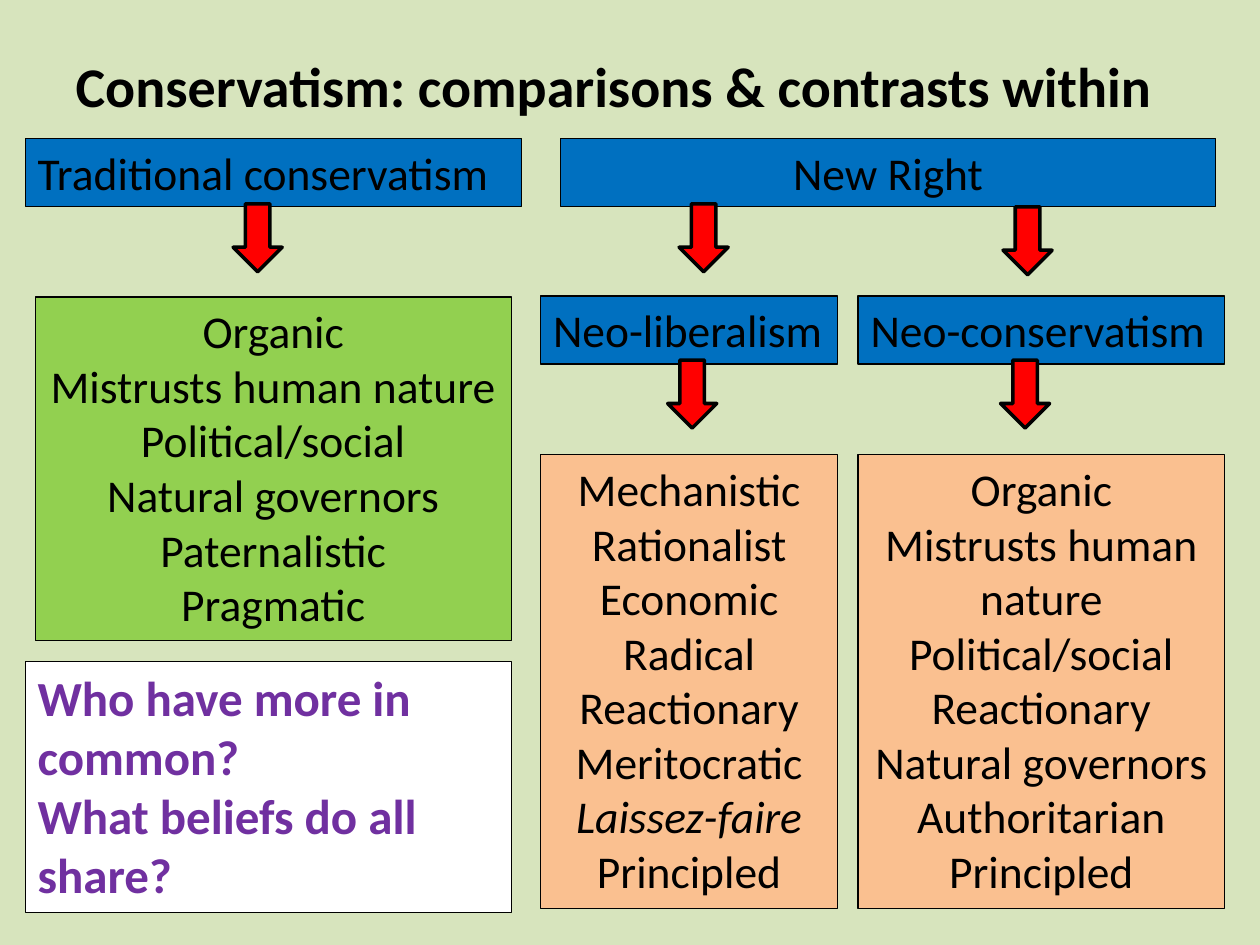
"""Build a slide comparing the strands of conservatism."""
from dataclasses import dataclass

from pptx import Presentation
from pptx.dml.color import RGBColor
from pptx.enum.shapes import MSO_SHAPE as Kind
from pptx.enum.text import MSO_ANCHOR as Anchor, MSO_AUTO_SIZE as Fit, PP_ALIGN as Align
from pptx.util import Cm, Pt

BLUE, GREEN, PEACH = "0070C0", "92D050", "FAC090"
BLACK, WHITE, RED, PURPLE = "000000", "FFFFFF", "FF0000", "7030A0"
HEAD = 1.37
ROW1, ROW2, ROW3 = 2.79, 5.97, 9.17
LIB, CON = (10.9, 5.99), (17.3, 7.39)


@dataclass
class Box:
    """A filled panel with its lines of text."""
    left: float
    top: float
    wide: float
    high: float
    fill: str
    lines: list[str]
    align: Align = Align.CENTER
    size: int = 26
    ink: str = BLACK
    bold: bool = False


@dataclass
class Arrow:
    """The top left corner of a down arrow."""
    left: float
    top: float


def tint(code: str) -> RGBColor:
    """Turn a hex string into a colour."""
    return RGBColor.from_string(code)


def write(para, text: str, size: int, ink: str, bold: bool) -> None:
    """Add one styled run to a paragraph."""
    run = para.add_run()
    run.text = text
    font = run.font
    font.name, font.size, font.bold = "Calibri", Pt(size), bold
    font.italic = text == "Laissez-faire"
    font.color.rgb = tint(ink)


def place(slide, kind: Kind, area: tuple, fill: str, line: float):
    """Add a flat shape with a black outline."""
    shape = slide.shapes.add_shape(kind, *map(Cm, area))
    shape.shadow.inherit = False
    shape.fill.solid()
    shape.fill.fore_color.rgb = tint(fill)
    shape.line.color.rgb = tint(BLACK)
    shape.line.width = Pt(line)
    return shape


def draw_box(slide, box: Box) -> None:
    """Draw a panel and its text."""
    area = (box.left, box.top, box.wide, box.high)
    frame = place(slide, Kind.RECTANGLE, area, box.fill, 0.75).text_frame
    frame.word_wrap = True
    frame.auto_size = Fit.SHAPE_TO_FIT_TEXT
    frame.vertical_anchor = Anchor.TOP
    for i, text in enumerate(box.lines):
        para = frame.add_paragraph() if i else frame.paragraphs[0]
        para.alignment = box.align
        write(para, text, box.size, box.ink, box.bold)


def draw_arrow(slide, arrow: Arrow) -> None:
    """Draw a red down arrow."""
    place(slide, Kind.DOWN_ARROW, (arrow.left, arrow.top, 0.99, HEAD), RED, 2)


def draw_title(slide, text: str) -> None:
    """Move and fill the title placeholder."""
    title = slide.shapes.title
    title.left, title.top, title.width, title.height = map(Cm, (1.27, 0.53, 22.86, 2.36))
    frame = title.text_frame
    frame.word_wrap = True
    frame.auto_size = Fit.NONE
    frame.vertical_anchor = Anchor.MIDDLE
    para = frame.paragraphs[0]
    para.alignment = Align.LEFT
    write(para, text, 32, BLACK, True)


BOXES = [
    Box(0.51, ROW1, 10.01, HEAD, BLUE, ["Traditional conservatism"], Align.LEFT),
    Box(0.71, 5.99, 9.6, 6.93, GREEN, [
        "Organic", "Mistrusts human nature", "Political/social",
        "Natural governors", "Paternalistic", "Pragmatic"]),
    Box(11.3, ROW1, 13.21, HEAD, BLUE, ["New Right"]),
    Box(LIB[0], ROW2, LIB[1], HEAD, BLUE, ["Neo-liberalism"], Align.LEFT),
    Box(CON[0], ROW2, CON[1], HEAD, BLUE, ["Neo-conservatism"], Align.LEFT),
    Box(LIB[0], ROW3, LIB[1], 9.14, PEACH, [
        "Mechanistic", "Rationalist", "Economic", "Radical", "Reactionary",
        "Meritocratic", "Laissez-faire", "Principled"]),
    Box(CON[0], ROW3, CON[1], 9.14, PEACH, [
        "Organic", "Mistrusts human nature", "Political/social", "Reactionary",
        "Natural governors", "Authoritarian", "Principled"]),
    Box(0.51, 13.34, 9.8, 5.05, WHITE, [
        "Who have more in common?", "What beliefs do all share?"],
        Align.LEFT, 28, PURPLE, True),
]
ARROWS = [Arrow(4.7, 4.11), Arrow(13.69, 4.11), Arrow(20.22, 4.17),
          Arrow(13.46, 7.26), Arrow(20.17, 7.26)]


def main() -> None:
    """Build and save the deck."""
    deck = Presentation()
    deck.slide_width, deck.slide_height = Cm(25.4), Cm(19.05)
    slide = deck.slides.add_slide(deck.slide_layouts[5])
    back = slide.background.fill
    back.solid()
    back.fore_color.rgb = tint("D7E4BD")
    draw_title(slide, "Conservatism: comparisons & contrasts within")
    for box in BOXES:
        draw_box(slide, box)
    for arrow in ARROWS:
        draw_arrow(slide, arrow)
    deck.save("out.pptx")


if __name__ == "__main__":
    main()
